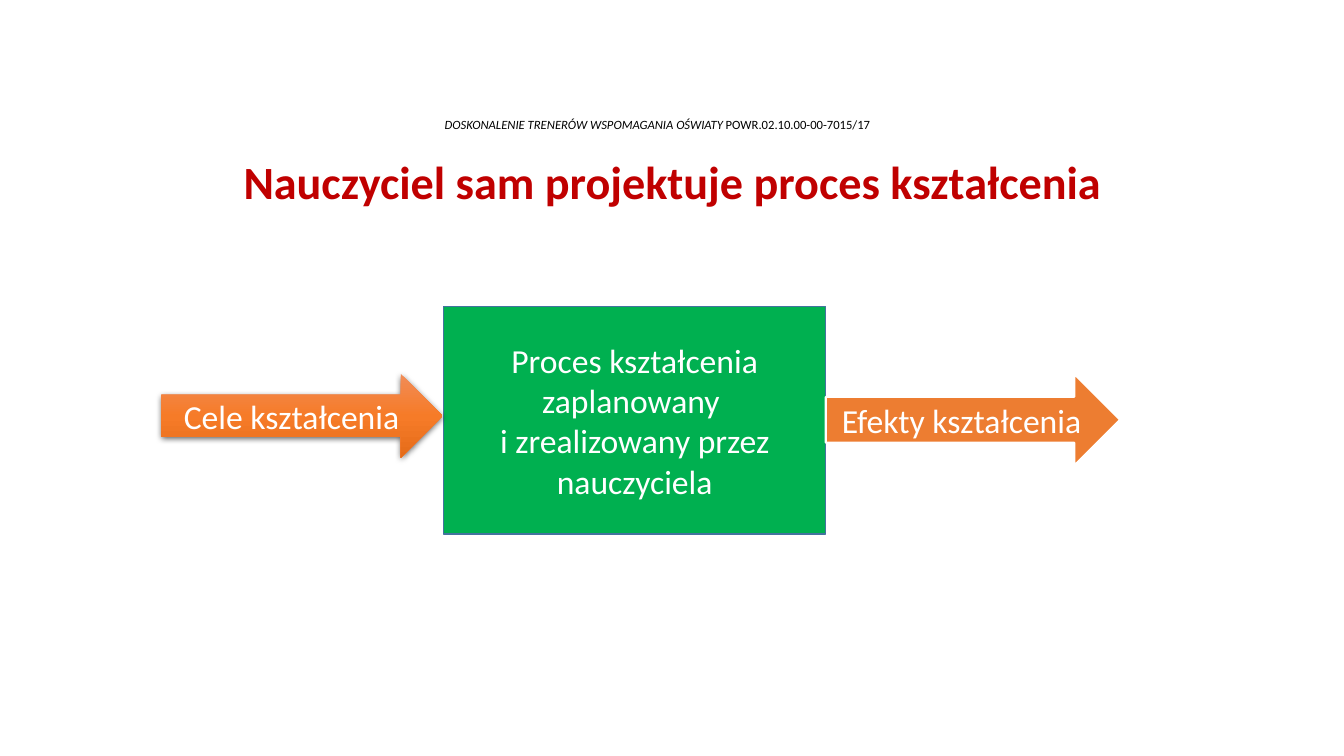
import pptx
import pptx.util
import pptx.dml.color
import pptx.enum.shapes
import pptx.enum.text
import pptx.oxml
import pptx.oxml.ns

Inches = pptx.util.Inches
Pt = pptx.util.Pt
SHAPES = pptx.enum.shapes.MSO_SHAPE
DRAWING = pptx.oxml.ns.nsdecls("a")


def color(value):
    return pptx.dml.color.RGBColor.from_string(value)


class ProcessPage:
    font_name = "Calibri"
    white = "FFFFFF"

    def __init__(self, deck):
        self.page = deck.slides.add_slide(deck.slide_layouts[5])

    def format_span(self, span, size, value, bold=False, italic=False):
        span.font.name = self.font_name
        span.font.size = Pt(size)
        span.font.color.rgb = color(value)
        span.font.bold = bold
        span.font.italic = italic

    def format_frame(self, frame, spacing=1.0):
        frame.word_wrap = True
        frame.auto_size = pptx.enum.text.MSO_AUTO_SIZE.NONE
        frame.vertical_anchor = pptx.enum.text.MSO_ANCHOR.MIDDLE
        para = frame.paragraphs[0]
        para.alignment = pptx.enum.text.PP_ALIGN.CENTER
        para.line_spacing = spacing
        return para

    def add_header(self, project, number, left, top, width, height):
        box = self.page.shapes.add_textbox(
            Inches(left), Inches(top), Inches(width), Inches(height))
        para = self.format_frame(box.text_frame, 0.9)
        for text, italic in ((project, True), (number, False)):
            span = para.add_run()
            span.text = text
            self.format_span(span, 9, "000000", italic=italic)

    def set_title(self, text, left, top, width, height):
        title = self.page.shapes.title
        title.left, title.top = Inches(left), Inches(top)
        title.width, title.height = Inches(width), Inches(height)
        title.text_frame.text = text
        para = self.format_frame(title.text_frame, 0.9)
        self.format_span(para.runs[0], 33, "C00000", bold=True)

    def add_step(self, kind, text, left, top, width, height, fill, line=None, weight=1):
        step = self.page.shapes.add_shape(
            kind, Inches(left), Inches(top), Inches(width), Inches(height))
        step.shadow.inherit = False
        step.fill.solid()
        step.fill.fore_color.rgb = color(fill)
        if line:
            step.line.color.rgb = color(line)
            step.line.width = Pt(weight)
        else:
            step.line.fill.background()
        step.text_frame.text = text
        para = self.format_frame(step.text_frame)
        for span in para.runs:
            self.format_span(span, 24, self.white)
        return step

    def add_gradient(self, step, stops):
        step.fill.gradient()
        step.fill.gradient_angle = 270
        stop_list = step.element.spPr.find(".//" + pptx.oxml.ns.qn("a:gsLst"))
        for stop in list(stop_list):
            stop_list.remove(stop)
        for percent, value in stops:
            stop_list.append(pptx.oxml.parse_xml(
                f'<a:gs {DRAWING} pos="{percent * 1000}"><a:srgbClr val="{value}"/></a:gs>'))

    def add_shadow(self, step, blur, distance, opacity):
        effects = step.element.spPr.find(pptx.oxml.ns.qn("a:effectLst"))
        effects.append(pptx.oxml.parse_xml(
            f'<a:outerShdw {DRAWING} blurRad="{Pt(blur)}" dist="{Pt(distance)}" '
            f'dir="5400000" algn="ctr" rotWithShape="0"><a:srgbClr val="000000">'
            f'<a:alpha val="{opacity * 1000}"/></a:srgbClr></a:outerShdw>'))


def main():
    deck = pptx.Presentation()
    deck.slide_width, deck.slide_height = Inches(13.33), Inches(7.5)
    process = ProcessPage(deck)
    process.add_header("DOSKONALENIE TRENERÓW WSPOMAGANIA OŚWIATY ",
                       "POWR.02.10.00-00-7015/17", 0.79, 1.1, 11.46, 0.28)
    process.set_title("Nauczyciel sam projektuje proces kształcenia",
                      0.92, 1.46, 11.5, 0.74)
    process.add_step(SHAPES.RECTANGLE,
                     "Proces kształcenia zaplanowany \vi zrealizowany przez nauczyciela",
                     4.4, 3.04, 3.79, 2.26, "00B050", "43739E")
    goals = process.add_step(SHAPES.RIGHT_ARROW, "Cele kształcenia",
                             1.6, 3.71, 2.79, 0.83, "F67B28")
    process.add_gradient(goals, ((0, "F18C57"), (50, "F67B28"), (100, "E56C19")))
    process.add_shadow(goals, blur=4.5, distance=1.5, opacity=63)
    process.add_step(SHAPES.RIGHT_ARROW, "Efekty kształcenia",
                     8.19, 3.71, 2.92, 0.91, "ED7D31", process.white, 1.5)
    deck.save("out.pptx")


if __name__ == "__main__":
    main()
